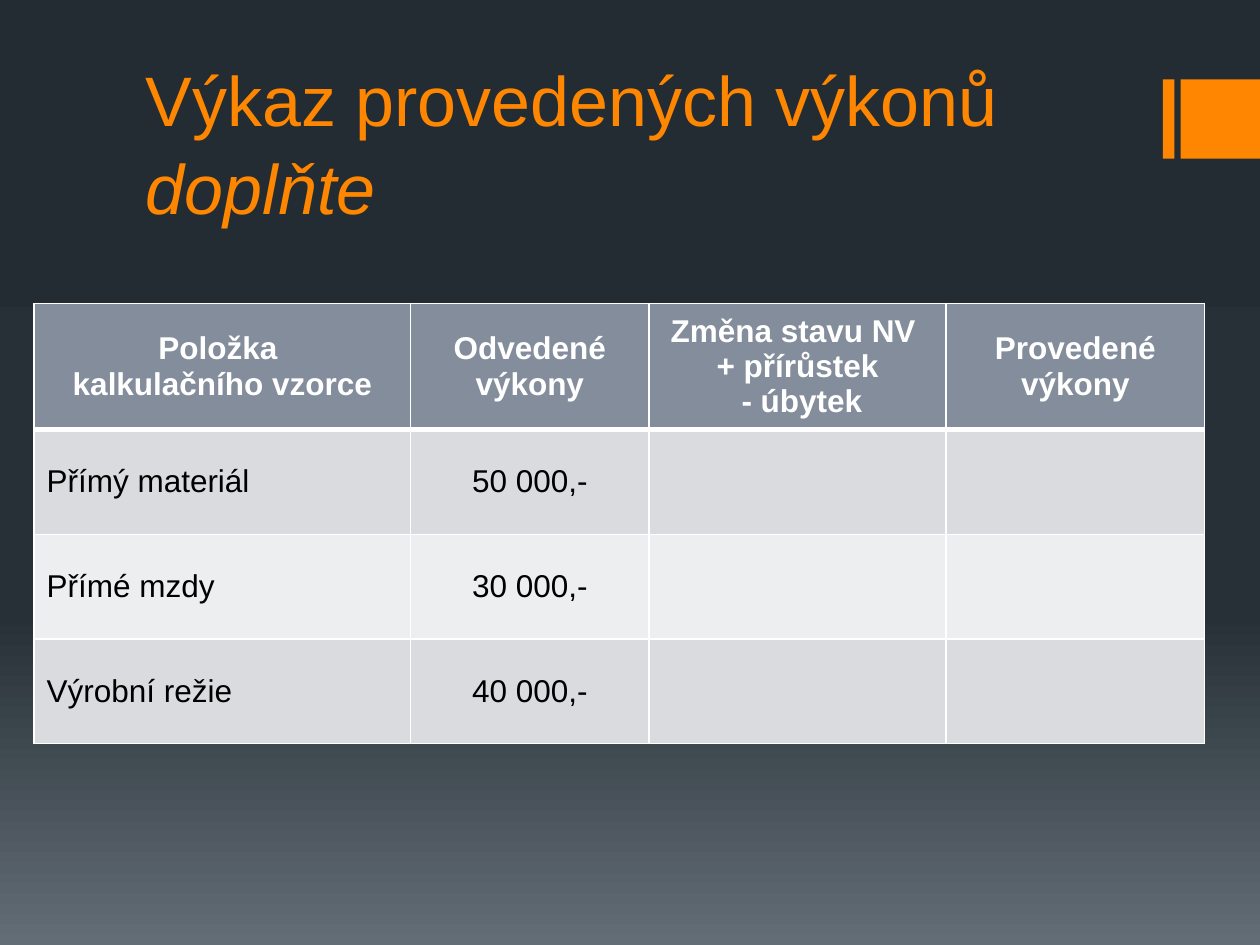
from copy import deepcopy

from lxml.etree import SubElement
from pptx import Presentation
from pptx.dml.color import RGBColor
from pptx.enum.shapes import MSO_SHAPE
from pptx.enum.text import MSO_ANCHOR, PP_ALIGN
from pptx.oxml.ns import qn
from pptx.util import Inches, Pt

ORANGE = RGBColor(0xFF, 0x86, 0x00)
WHITE = RGBColor(0xFF, 0xFF, 0xFF)
BLACK = RGBColor(0x00, 0x00, 0x00)
HEADER = RGBColor(0x83, 0x8D, 0x9B)
BANDS = (RGBColor(0xD9, 0xDB, 0xDE), RGBColor(0xED, 0xEE, 0xEF))
BACKDROP = (
    (0, RGBColor(0x24, 0x2C, 0x33)),
    (0.65, RGBColor(0x27, 0x30, 0x37)),
    (1, RGBColor(0x63, 0x6D, 0x76)),
)

COLUMNS = (2.99, 1.89, 2.36, 2.05)
ROWS = (0.93, 0.83, 0.83, 0.83)
HEADINGS = (
    ("Položka ", "kalkulačního vzorce"),
    ("Odvedené výkony",),
    ("Změna stavu NV ", "+ přírůstek", " - úbytek"),
    ("Provedené výkony",),
)
COSTS = (
    ("Přímý materiál", "50 000,-"),
    ("Přímé mzdy", "30 000,-"),
    ("Výrobní režie", "40 000,-"),
)


class SlideBuilder:
    """Holds the style and the current slide; lengths are in columns and rows of one inch."""

    font = "Arial"

    def __init__(self, page):
        self.page = page

    def background(self, stops):
        fill = self.page.background.fill
        fill.gradient()
        fill.gradient_angle = 270
        stop_list = next(self.page.element.iter(qn("a:gsLst")))
        stop_list.append(deepcopy(stop_list[0]))
        for stop, (position, color) in zip(fill.gradient_stops, stops):
            stop.position = position
            stop.color.rgb = color

    def block(self, left, top, width, height, color):
        shape = self.page.shapes.add_shape(
            MSO_SHAPE.RECTANGLE, *map(Inches, (left, top, width, height))
        )
        shape.shadow.inherit = False
        shape.fill.solid()
        shape.fill.fore_color.rgb = color
        shape.line.fill.background()

    def span(self, para, text, size, color, bold=False, italic=False):
        span = para.add_run()
        span.text = text
        span.font.name = self.font
        span.font.size = Pt(size)
        span.font.color.rgb = color
        span.font.bold = bold
        span.font.italic = italic

    def title(self, left, top, width, height, text, note):
        box = self.page.shapes.add_textbox(*map(Inches, (left, top, width, height)))
        frame = box.text_frame
        frame.word_wrap = True
        frame.vertical_anchor = MSO_ANCHOR.BOTTOM
        para = frame.paragraphs[0]
        para.line_spacing = 1.04
        self.span(para, text, 40, ORANGE)
        para.add_line_break()
        self.span(para, note, 40, ORANGE, italic=True)

    def borders(self, cell, top, bottom):
        properties = cell._tc.get_or_add_tcPr()
        widths = {"a:lnL": 1, "a:lnR": 1, "a:lnT": top, "a:lnB": bottom}
        for index, (side, width) in enumerate(widths.items()):
            line = SubElement(properties, qn(side), w=str(Pt(width)))
            properties.insert(index, line)
            fill = SubElement(line, qn("a:solidFill"))
            SubElement(fill, qn("a:srgbClr"), val=str(WHITE))

    def cell(self, cell, lines, fill, color, align, bold=False):
        cell.fill.solid()
        cell.fill.fore_color.rgb = fill
        cell.vertical_anchor = MSO_ANCHOR.MIDDLE
        for index, text in enumerate(lines):
            frame = cell.text_frame
            para = frame.add_paragraph() if index else frame.paragraphs[0]
            para.alignment = align
            self.span(para, text, 18, color, bold=bold)

    def table(self, left, top, headings, records):
        size = (left, top, sum(COLUMNS), sum(ROWS))
        table = self.page.shapes.add_table(
            len(ROWS), len(COLUMNS), *map(Inches, size)
        ).table
        table.horz_banding = False
        for column, width in zip(table.columns, COLUMNS):
            column.width = Inches(width)
        for row, height in zip(table.rows, ROWS):
            row.height = Inches(height)
        for index, lines in enumerate(headings):
            self.cell(table.cell(0, index), lines, HEADER, WHITE, PP_ALIGN.CENTER, True)
            self.borders(table.cell(0, index), 1, 3)
        for row, record in enumerate(records, 1):
            for index in range(len(COLUMNS)):
                cell = table.cell(row, index)
                align = PP_ALIGN.CENTER if index else PP_ALIGN.LEFT
                lines = record[index:index + 1]
                self.cell(cell, lines, BANDS[(row - 1) % 2], BLACK, align)
                self.borders(cell, 3 if row == 1 else 1, 1)


def main():
    deck = Presentation()
    deck.slide_width, deck.slide_height = Inches(10), Inches(7.5)
    builder = SlideBuilder(deck.slides.add_slide(deck.slide_layouts[6]))
    builder.background(BACKDROP)
    for left, width in ((9.23, 0.09), (9.37, 0.63)):
        builder.block(left, 0.63, width, 0.63, ORANGE)
    builder.title(1.06, 0.6, 8, 1.26, "Výkaz provedených výkonů", "doplňte")
    builder.table(0.27, 2.41, HEADINGS, COSTS)
    deck.save("out.pptx")


if __name__ == "__main__":
    main()
